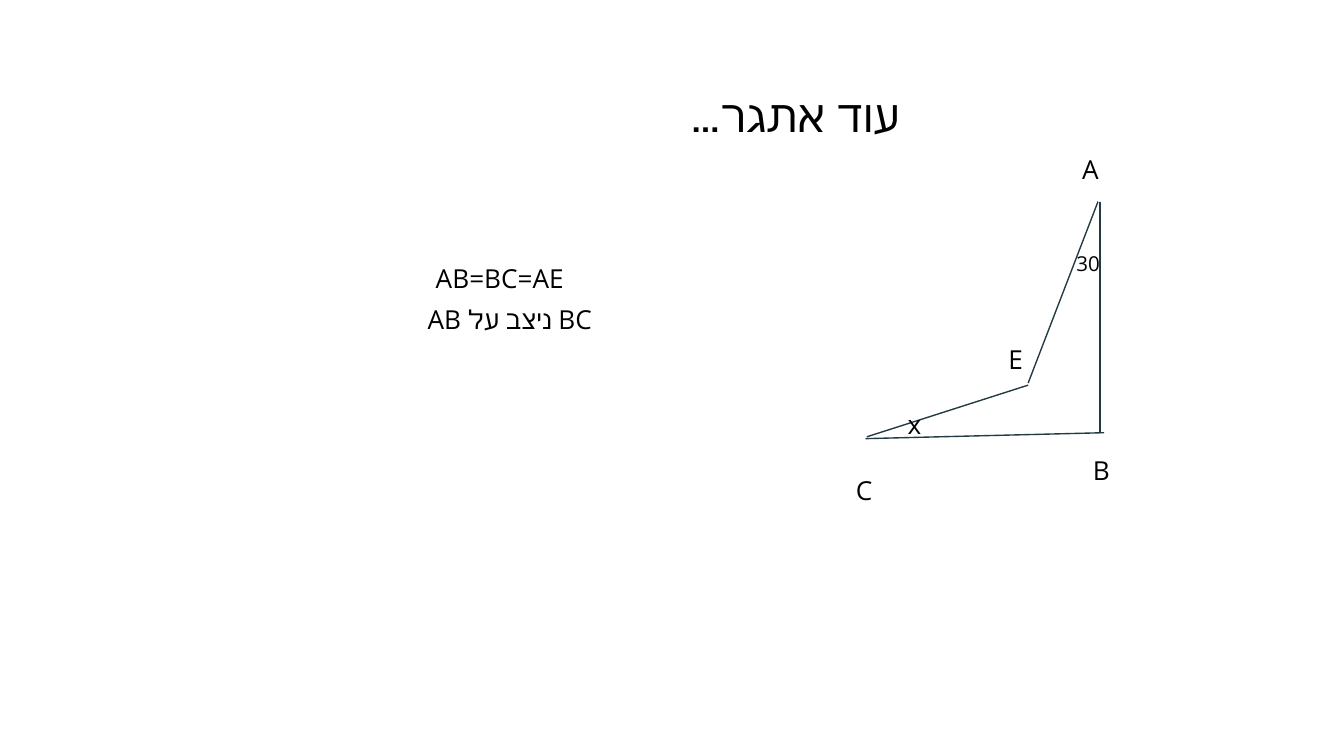
from dataclasses import dataclass

from lxml import etree
from pptx import Presentation
from pptx import util as u
from pptx.dml.color import RGBColor
from pptx.enum import shapes, text
from pptx.oxml.ns import qn


@dataclass(frozen=True)
class Theme:
    font: str = "Open Sans"
    ink: str = "000000"
    line: str = "233A44"
    line_width: float = 0.75
    title: int = 24
    body: int = 14
    small: int = 11
    inset: float = 0.1


T = Theme()
WIDTH = u.Inches(10)
HEIGHT = WIDTH * 9 // 16
COLUMNS = 100
ROW = 4.4

SEGMENTS = [
    (81.84, 15, 81.84, 32.2),
    (82.15, 32.2, 64.4, 32.64),
    (81.7, 15, 76.5, 28.5),
    (64.5, 32.5, 76.5, 28.66),
]
LABELS = [
    ("A", 79.54, 10.4, 5.2),
    ("B", 80.34, 32.8, 5.2),
    ("C", 62.7, 34.3, 3.8),
    ("E", 74.04, 24.54, 3.8),
    ("x", 66.54, 29.4, 3.2),
    ("AB=BC=AE", 31.44, 18.5, 14.7),
    ("AB ניצב על BC", 30.84, 21.6, 15.9),
]


def grid(*cells):
    return [round(WIDTH * c / COLUMNS) for c in cells]


def add_text(s, words, x, y, w, h=ROW, size=T.body, rtl=False):
    tf = s.shapes.add_textbox(*grid(x, y, w, h)).text_frame
    tf.word_wrap = True
    tf.auto_size = text.MSO_AUTO_SIZE.SHAPE_TO_FIT_TEXT
    tf.margin_left = tf.margin_right = u.Inches(T.inset)
    tf.margin_top = tf.margin_bottom = u.Inches(T.inset)
    p = tf.paragraphs[0]
    p.alignment = text.PP_ALIGN.RIGHT if rtl else text.PP_ALIGN.LEFT
    if rtl:
        p._p.get_or_add_pPr().set("rtl", "1")
    r = p.add_run()
    r.text = words
    r.font.size = u.Pt(size)
    r.font.color.rgb = RGBColor.from_string(T.ink)
    r.font.name = T.font


def add_line(s, *ends):
    c = s.shapes.add_connector(shapes.MSO_CONNECTOR.STRAIGHT, *grid(*ends))
    c.line.color.rgb = RGBColor.from_string(T.line)
    c.line.width = u.Pt(T.line_width)
    etree.SubElement(c._element.spPr, qn("a:effectLst"))


def main():
    prs = Presentation()
    prs.slide_width, prs.slide_height = WIDTH, HEIGHT
    s = prs.slides.add_slide(prs.slide_layouts[6])
    for ends in SEGMENTS:
        add_line(s, *ends)
    for label in LABELS:
        add_text(s, *label)
    add_text(s, "30", 79.1, 17.76, 3.8, h=3.9, size=T.small)
    add_text(s, "עוד אתגר…", 29.7, 5.5, 38.2, h=6.1, size=T.title, rtl=True)
    prs.save("out.pptx")


if __name__ == "__main__":
    main()
